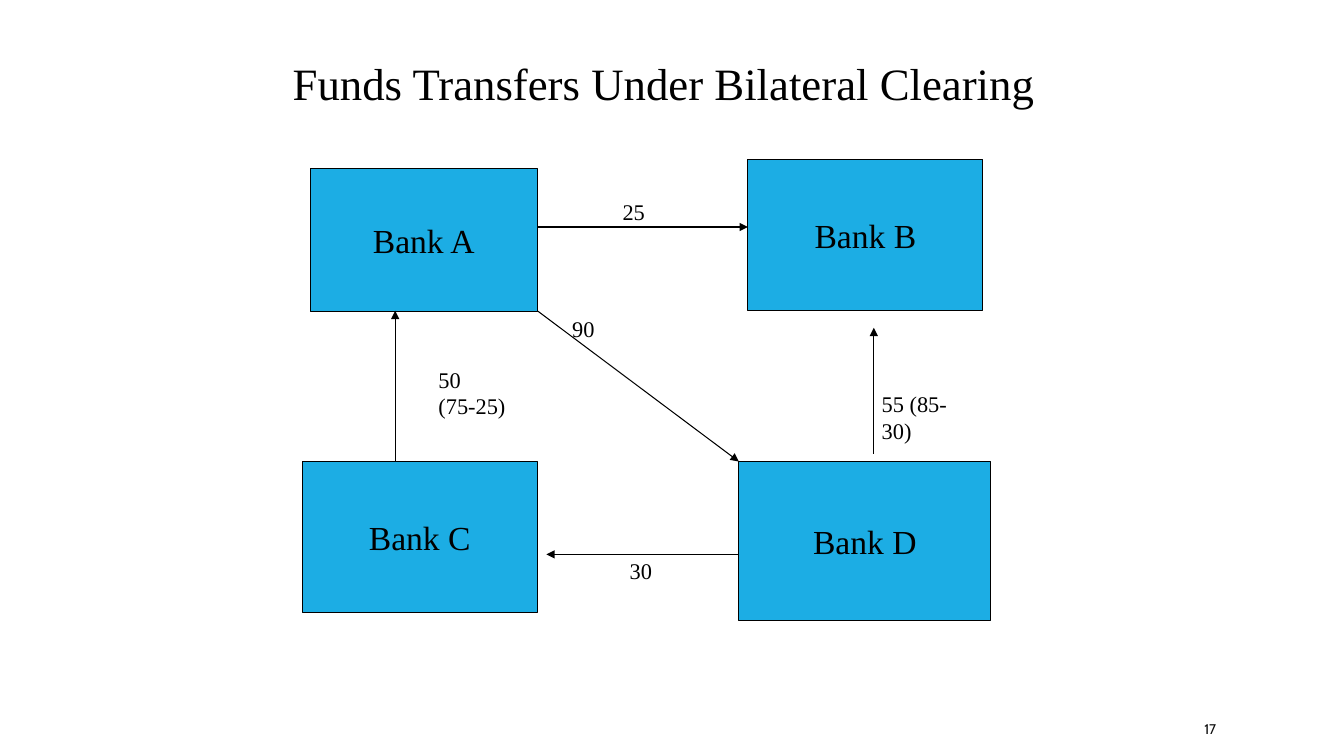
"""Build the slide on funds transfers under bilateral clearing."""
from lxml import etree
from pptx import Presentation
from pptx import util as u
from pptx.dml.color import RGBColor
from pptx.enum import shapes, text
from pptx.oxml import ns

BLACK = RGBColor(0x00, 0x00, 0x00)
NEAR_BLACK = RGBColor(0x0D, 0x0D, 0x0D)
BLUE = RGBColor(0x1C, 0xAD, 0xE4)
SERIF = "Times New Roman"
LINE_WIDTH = u.Pt(0.75)

TITLE = ("Funds Transfers Under Bilateral Clearing", (6.99, 1.27, 19.48, 1.6))
PAGE_NUMBER = ("17", (30.1, 17.98, 2.69, 0.76))
BANKS = {
    "Bank A": (7.82, 4.24, 5.72, 3.61),
    "Bank B": (18.85, 4.01, 5.92, 3.81),
    "Bank C": (7.62, 11.63, 5.92, 3.81),
    "Bank D": (18.62, 11.63, 6.35, 4.01),
}
TRANSFERS = [
    ("25", (13.54, 5.72), (18.85, 5.72), (15.44, 4.88, 1.32, 0.94), True),
    ("55 (85-30)", (22.02, 11.43), (22.02, 8.26), (21.97, 9.7, 2.16, 1.63), True),
    ("90", (13.54, 7.83), (18.62, 11.63), (14.17, 7.82, 2.95, 0.94), True),
    ("50\n(75-25)", (9.96, 11.63), (9.96, 7.83), (10.8, 9.09, 2.24, 1.63), False),
    ("30", (18.62, 13.97), (13.77, 13.97), (15.62, 13.92, 1.07, 0.94), False),
]


def cm(lengths):
    return [u.Cm(length) for length in lengths]


def write(frame, words, size, font=SERIF, color=BLACK, align=None, wrap=True):
    frame.text = words
    frame.word_wrap = wrap
    for paragraph in frame.paragraphs:
        paragraph.alignment = align
        for run in paragraph.runs:
            run.font.size = u.Pt(size)
            run.font.name = font
            run.font.color.rgb = color


def add_bank(slide, name, place):
    bank = slide.shapes.add_shape(shapes.MSO_SHAPE.RECTANGLE, *cm(place))
    bank.shadow.inherit = False
    bank.fill.solid()
    bank.fill.fore_color.rgb = BLUE
    bank.line.color.rgb = BLACK
    bank.line.width = LINE_WIDTH
    bank.text_frame.vertical_anchor = text.MSO_ANCHOR.MIDDLE
    write(bank.text_frame, name, 24, align=text.PP_ALIGN.CENTER, wrap=False)


def add_arrow(slide, start, end):
    arrow = slide.shapes.add_connector(shapes.MSO_CONNECTOR.STRAIGHT, *cm(start + end))
    arrow.line.color.rgb = BLACK
    arrow.line.width = LINE_WIDTH
    etree.SubElement(arrow.line._get_or_add_ln(), ns.qn("a:tailEnd"), type="triangle")
    etree.SubElement(arrow._element.spPr, ns.qn("a:effectLst"))


def add_text(slide, words, place, size, **style):
    frame = slide.shapes.add_textbox(*cm(place)).text_frame
    write(frame, words, size, **style)
    return frame


def main():
    deck = Presentation()
    deck.slide_width, deck.slide_height = cm((33.87, 19.05))
    slide = deck.slides.add_slide(deck.slide_layouts[6])

    page_number = add_text(slide, *PAGE_NUMBER, 10, font="Cabin", color=NEAR_BLACK)
    page_number.vertical_anchor = text.MSO_ANCHOR.MIDDLE
    for name, place in BANKS.items():
        add_bank(slide, name, place)
    add_text(slide, *TITLE, 32, align=text.PP_ALIGN.CENTER)
    for amount, start, end, place, wrap in TRANSFERS:
        add_arrow(slide, start, end)
        add_text(slide, amount, place, 16, wrap=wrap)

    deck.save("out.pptx")


if __name__ == "__main__":
    main()
